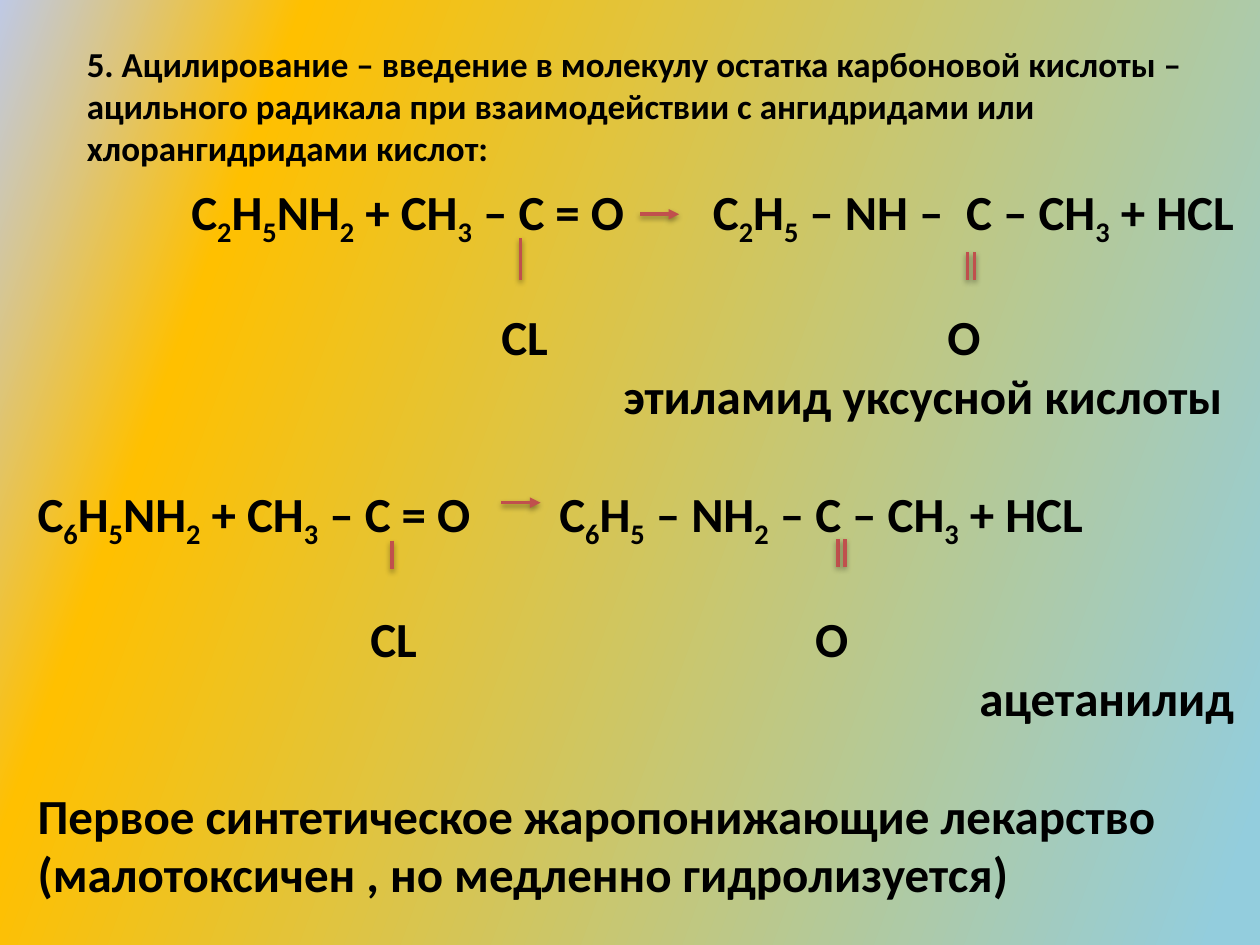
from itertools import groupby

from lxml.etree import SubElement
from pptx import Presentation
from pptx.dml.color import RGBColor
from pptx.enum.shapes import MSO_CONNECTOR as Connector
from pptx.enum.text import PP_ALIGN as Align
from pptx.oxml.ns import qn
from pptx.util import Inches, Pt

COLS, ROWS = 100, 75  # grid cells across and down the slide
BLANK_LINE = 33.5


def rgb(hex_code):
    return RGBColor.from_string(hex_code)


def add_xml(parent, tag, **attrs):
    return SubElement(parent, qn(tag), {k: str(v) for k, v in attrs.items()})


class Deck:
    font = "Calibri"
    ink = "000000"
    bond_colour = "C0504D"
    bond_width = 2

    def __init__(self, width, height):
        self.prs = Presentation()
        self.prs.slide_width, self.prs.slide_height = Inches(width), Inches(height)
        self.s = self.prs.slides.add_slide(self.prs.slide_layouts[6])

    def x(self, cols):
        return round(self.prs.slide_width * cols / COLS)

    def y(self, rows):
        return round(self.prs.slide_height * rows / ROWS)

    def background(self, stops, angle):
        fill = self.s.background.fill
        fill.gradient()
        fill.gradient_angle = 360 - angle
        stop_list = self.s.background._cSld.find(".//" + qn("a:gsLst"))
        for old in list(stop_list):
            stop_list.remove(old)
        for position, colour in stops:
            stop = add_xml(stop_list, "a:gs", pos=position * 1000)
            add_xml(stop, "a:srgbClr", val=colour)

    def text_box(self, left, top, width, height):
        sp = self.s.shapes.add_textbox(self.x(left), self.y(top), self.x(width), self.y(height))
        sp.text_frame.word_wrap = True
        return sp.text_frame

    def run(self, p, text, size, subscript=False):
        r = p.add_run()
        r.text = text
        r.font.name, r.font.size, r.font.bold = self.font, Pt(size), True
        r.font.color.rgb = rgb(self.ink)
        if subscript:
            r.font._element.set("baseline", "-25000")

    def paragraph(self, tf, text, size, tabs=(), before=0, align=Align.LEFT):
        """Add a paragraph with its digits as subscripts and tab stops in columns."""
        p = tf.paragraphs[0] if not tf.paragraphs[0].runs else tf.add_paragraph()
        p.alignment = align
        if before:
            p.space_before = Pt(before)
        if tabs:
            tab_list = add_xml(p._p.get_or_add_pPr(), "a:tabLst")
            for tab in tabs:
                add_xml(tab_list, "a:tab", pos=self.x(tab), algn="l")
        for is_digit, chars in groupby(text, str.isdigit):
            self.run(p, "".join(chars), size, is_digit)

    def line(self, x1, y1, x2, y2, arrow=False, shapes=None):
        shapes = self.s.shapes if shapes is None else shapes
        c = shapes.add_connector(Connector.STRAIGHT, self.x(x1), self.y(y1), self.x(x2), self.y(y2))
        c.line.color.rgb = rgb(self.bond_colour)
        c.line.width = Pt(self.bond_width)
        if arrow:
            add_xml(c.line._get_or_add_ln(), "a:tailEnd", type="triangle")
        effects = add_xml(c._element.spPr, "a:effectLst")
        shadow = add_xml(effects, "a:outerShdw", blurRad=Pt(3.1), dist=Pt(1.6),
                         dir=90 * 60000, rotWithShape=0)
        add_xml(add_xml(shadow, "a:srgbClr", val="000000"), "a:alpha", val=38000)

    def arrow(self, x, y):
        self.line(x, y, x + 3.1, y, arrow=True)

    def bond(self, x, top, length):
        self.line(x, top, x, top + length)

    def double_bond(self, x, top):
        group = self.s.shapes.add_group_shape()
        for offset in (0, 0.55):
            self.line(x + offset, top, x + offset, top + 2.2, shapes=group.shapes)


def main():
    deck = Deck(10, 7.5)
    deck.background([(0, "BFC9E5"), (19, "FFC000"), (97, "93CDDD")], angle=20)

    heading = deck.text_box(5.9, 2.9, 92.9, 11.1)
    deck.run(heading.paragraphs[0],
             "5. Ацилирование – введение в молекулу остатка карбоновой кислоты – "
             "ацильного радикала при взаимодействии с ангидридами или "
             "хлорангидридами кислот:", 20)

    reactions = deck.text_box(2, 13.9, 96.9, 64.3)
    for text, tabs, before, align in [
        ("\tC2H5NH2 + CH3 – C = O\tC2H5 – NH –\tC – CH3 + HCL",
         (12.2, 53.6, 73.7), 0, Align.LEFT),
        ("\tCL\tO", (36.8, 72.2), BLANK_LINE, Align.LEFT),
        ("\tэтиламид уксусной кислоты", (46.5,), 0, Align.LEFT),
        ("C6H5NH2 + CH3 – C = O\tC6H5 – NH2 – C – CH3 + HCL",
         (41.4,), BLANK_LINE, Align.LEFT),
        ("\tCL\tO", (26.4, 61.7), BLANK_LINE, Align.LEFT),
        ("ацетанилид", (), 0, Align.RIGHT),
        ("Первое синтетическое жаропонижающие лекарство "
         "(малотоксичен , но медленно гидролизуется)", (), BLANK_LINE, Align.LEFT),
    ]:
        deck.paragraph(reactions, text, 28, tabs, before, align)

    deck.arrow(50.8, 17)
    deck.bond(41.3, 18.9, 3.3)
    deck.arrow(39.8, 39.9)
    deck.bond(31.1, 42.9, 2.3)
    deck.double_bond(66.5, 42.8)
    deck.double_bond(76.8, 20)

    deck.prs.save("out.pptx")


if __name__ == "__main__":
    main()
